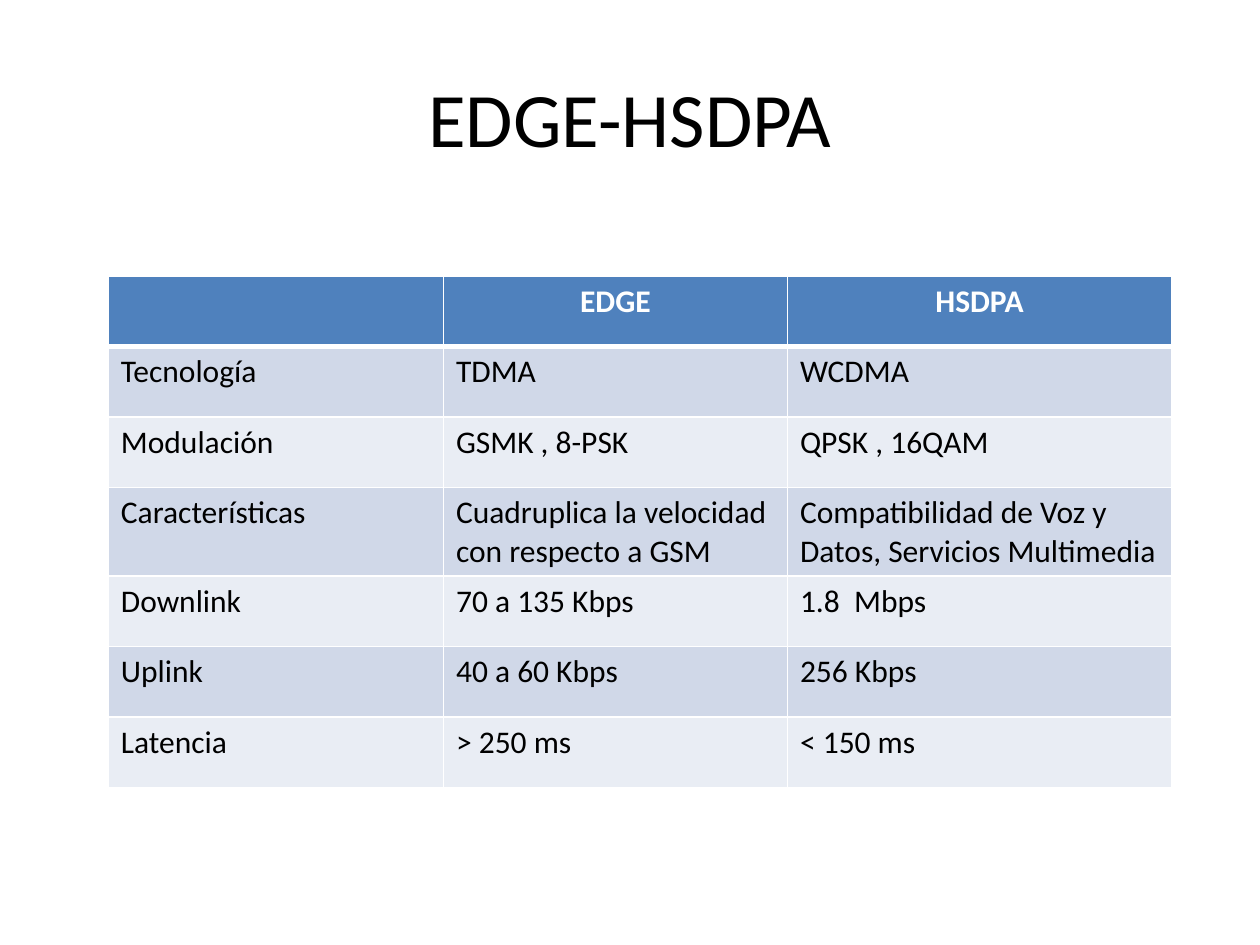
"""Build a slide with a table that compares EDGE and HSDPA."""
import pptx
import pptx.dml.color
import pptx.enum.text
import pptx.oxml
import pptx.oxml.ns
import pptx.util

Inches = pptx.util.Inches
Pt = pptx.util.Pt
ALIGN = pptx.enum.text.PP_ALIGN

FONT = "Calibri"
COLORS = {
    "text": "000000",
    "header_text": "FFFFFF",
    "header": "4F81BD",
    "odd_row": "D0D8E8",
    "even_row": "E9EDF4",
    "border": "FFFFFF",
}
COLUMN_WIDTHS = [2.66, 2.73, 3.05]
ROW_HEIGHT = 0.56
ROWS = [
    ["", "EDGE", "HSDPA"],
    ["Tecnología", "TDMA", "WCDMA"],
    ["Modulación", "GSMK , 8-PSK", "QPSK , 16QAM"],
    [
        "Características",
        "Cuadruplica la velocidad con respecto a GSM",
        "Compatibilidad de Voz y Datos, Servicios Multimedia",
    ],
    ["Downlink", "70 a 135 Kbps", "1.8  Mbps"],
    ["Uplink", "40 a 60 Kbps", "256 Kbps"],
    ["Latencia", "> 250 ms", "< 150 ms"],
]


def rgb(name):
    """Return the named color."""
    return pptx.dml.color.RGBColor.from_string(COLORS[name])


def write_text(text_frame, text, size=18, color="text", bold=False, align=ALIGN.LEFT):
    """Write one formatted paragraph into a text frame."""
    text_frame.word_wrap = True
    paragraph = text_frame.paragraphs[0]
    paragraph.text = text
    paragraph.alignment = align
    paragraph.font.name = FONT
    paragraph.font.size = Pt(size)
    paragraph.font.bold = bold
    paragraph.font.color.rgb = rgb(color)


def set_borders(cell, **widths):
    """Draw the cell borders with widths in points, keyed by side."""
    properties = cell._tc.get_or_add_tcPr()
    for side in "LRTB":
        width = int(Pt(widths.get(side, 1)))
        properties.append(pptx.oxml.parse_xml(
            f'<a:ln{side} {pptx.oxml.ns.nsdecls("a")} w="{width}"><a:solidFill>'
            f'<a:srgbClr val="{COLORS["border"]}"/></a:solidFill></a:ln{side}>'
        ))


def fill_cell(cell, color):
    """Give the cell a solid fill."""
    cell.fill.solid()
    cell.fill.fore_color.rgb = rgb(color)


def add_title(slide, text):
    """Add the centered slide title."""
    shape = slide.shapes.add_textbox(Inches(0.5), Inches(0.3), Inches(9), Inches(1.25))
    shape.text_frame.vertical_anchor = pptx.enum.text.MSO_ANCHOR.MIDDLE
    write_text(shape.text_frame, text, size=44, align=ALIGN.CENTER)


def add_comparison_table(slide, rows):
    """Add the table with a header row and banded body rows."""
    table = slide.shapes.add_table(
        len(rows), len(COLUMN_WIDTHS), Inches(0.86), Inches(2.19),
        Inches(sum(COLUMN_WIDTHS)), Inches(ROW_HEIGHT * len(rows)),
    ).table
    for column, width in zip(table.columns, COLUMN_WIDTHS):
        column.width = Inches(width)
    for row_index, texts in enumerate(rows):
        table.rows[row_index].height = Inches(ROW_HEIGHT)
        for column_index, text in enumerate(texts):
            cell = table.cell(row_index, column_index)
            if row_index == 0:
                set_borders(cell, B=3)
                fill_cell(cell, "header")
                write_text(cell.text_frame, text, color="header_text",
                           bold=True, align=ALIGN.CENTER)
            else:
                set_borders(cell, T=3 if row_index == 1 else 1)
                fill_cell(cell, "odd_row" if row_index % 2 else "even_row")
                write_text(cell.text_frame, text)


def main():
    """Build and save the presentation."""
    presentation = pptx.Presentation()
    presentation.slide_width = Inches(10)
    presentation.slide_height = Inches(7.5)
    slide = presentation.slides.add_slide(presentation.slide_layouts[6])
    add_title(slide, "EDGE-HSDPA")
    add_comparison_table(slide, ROWS)
    presentation.save("out.pptx")


if __name__ == "__main__":
    main()
